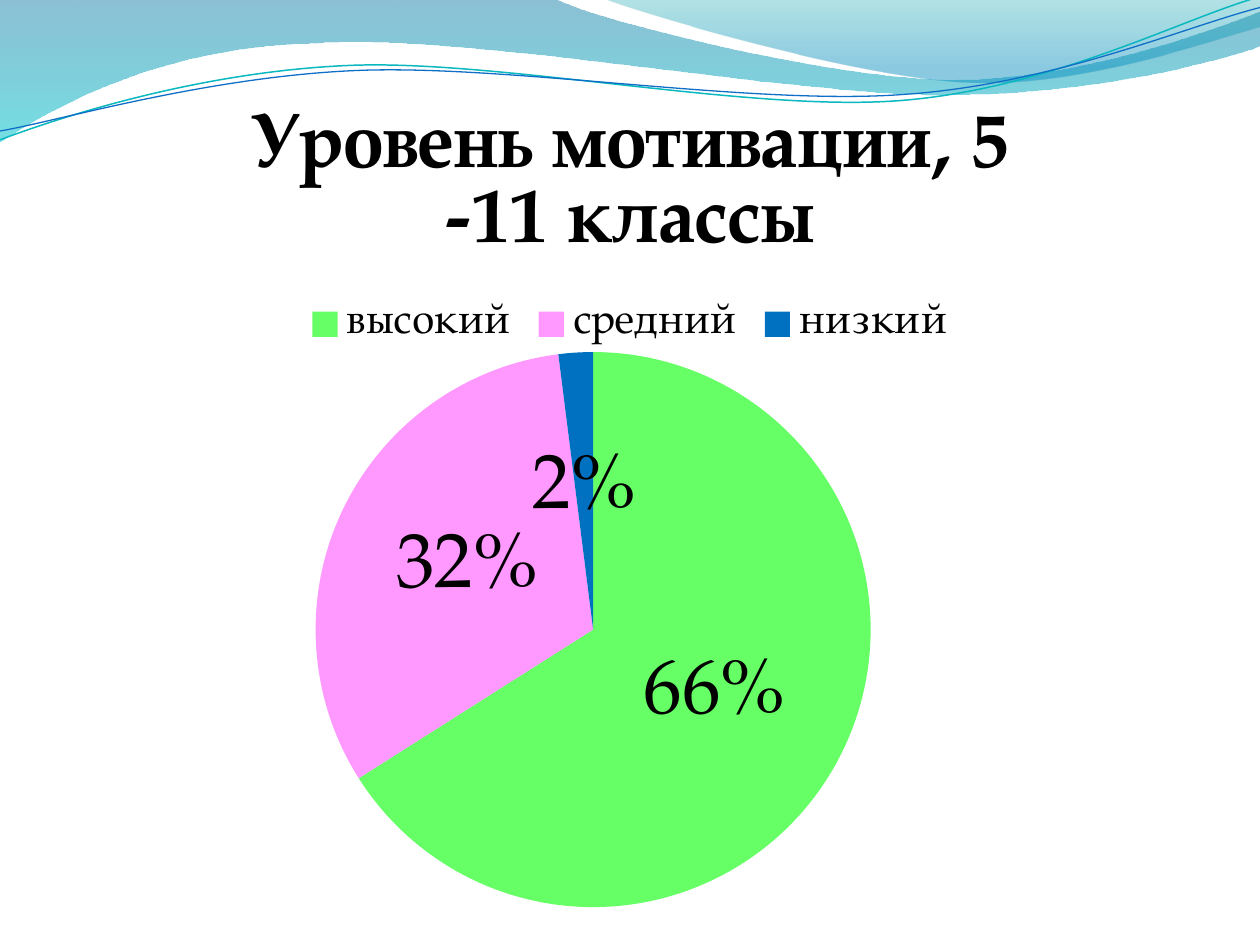
from lxml.etree import SubElement
from pptx import Presentation
from pptx.chart.data import CategoryChartData
from pptx.dml.color import RGBColor
from pptx.enum.chart import XL_CHART_TYPE, XL_LABEL_POSITION, XL_LEGEND_POSITION
from pptx.oxml import parse_xml
from pptx.oxml.ns import nsdecls, qn
from pptx.util import Inches, Pt

FONT = "TeX Gyre Pagella"

# Each outline is a start point followed by lines (2 numbers) or curves (6 numbers)
BANDS = [
    {"outline": [(0, 0), (4.4, -0.01), (4.76, 0.17, 6.64, 0.63, 7.58, 0.63),
                 (8.53, 0.63, 9.58, 0.26, 10, 0.09), (10.01, 0.36),
                 (9.83, 0.44, 8.7, 0.76, 7.46, 0.75),
                 (6.22, 0.75, 3.82, 0.28, 2.57, 0.34),
                 (1.29, 0.36, 0.46, 0.83, -0.01, 1.13), (0, 0)],
     "stops": [(0, "0074A1", 45), (1, "00C6CF", 55)]},
    {"outline": [(4.79, -0.01), (5.09, 0.11, 6.82, 0.62, 7.69, 0.65),
                 (8.56, 0.69, 9.61, 0.32, 10, 0.21), (10, 0), (4.79, -0.01)],
     "stops": [(0, "00A1A9", 30), (0.8, "008BBF", 45)]},
]
STRANDS = [
    {"outline": [(0, 1.11), (0.48, 0.93, 1.58, 0.57, 2.77, 0.52),
                 (3.95, 0.47, 5.93, 0.89, 7.13, 0.8),
                 (8.33, 0.71, 9.38, 0.15, 9.98, -0.02)],
     "colour": "0AB8BF", "width": 0.85},
    {"outline": [(0, 1.04), (0.47, 0.96, 1.64, 0.61, 2.83, 0.56),
                 (4.03, 0.51, 5.97, 0.84, 7.17, 0.75),
                 (8.36, 0.67, 9.41, 0.21, 10, 0.06)],
     "colour": "0F6FC6", "width": 0.75},
]
LEVELS = [("высокий", 66, "66FF66"), ("средний", 32, "FF99FF"), ("низкий", 2, "0070C0")]


def colour(hex_string):
    return RGBColor.from_string(hex_string)


def format_font(font, **values):
    settings = {"name": FONT, "bold": False, **values}
    for name, value in settings.items():
        setattr(font, name, value)
    font.color.rgb = colour("000000")


def add_outline(page, outline, origin, close):
    """Draw straight segments between the nodes, then bend those that are curves."""
    left, top = origin
    nodes = [(left + Inches(part[-2]), top + Inches(part[-1])) for part in outline]
    builder = page.shapes.build_freeform(*nodes[0])
    builder.add_line_segments(nodes[1:], close=close)
    shape = builder.convert_to_shape()
    shape.shadow.inherit = False

    segments = list(shape.element.spPr.iter(qn("a:lnTo")))
    for segment, part in zip(segments, outline[1:]):
        if len(part) == 2:
            continue
        segment.tag = qn("a:cubicBezTo")
        handles = [(part[0], part[1]), (part[2], part[3])]
        for index, (x, y) in enumerate(handles):
            handle = SubElement(segment, qn("a:pt"), x=str(left + Inches(x) - shape.left),
                                y=str(top + Inches(y) - shape.top))
            segment.insert(index, handle)
    return shape


def add_waves(page, origin):
    # Translucent bands, shaded from top to bottom
    for band in BANDS:
        shape = add_outline(page, band["outline"], origin, True)
        shape.line.fill.background()
        shape.fill.gradient()
        shape.fill.gradient_angle = 270
        for stop, (position, hex_string, _) in zip(shape.fill.gradient_stops, band["stops"]):
            stop.position = position
            stop.color.rgb = colour(hex_string)
        tints = shape.element.spPr.iter(qn("a:srgbClr"))
        for tint, (_, _, opacity) in zip(tints, band["stops"]):
            SubElement(tint, qn("a:alpha"), val=str(opacity * 1000))

    # Thin strands
    for strand in STRANDS:
        shape = add_outline(page, strand["outline"], origin, False)
        shape.fill.background()
        shape.line.color.rgb = colour(strand["colour"])
        shape.line.width = Pt(strand["width"])


def place_plot(chart, **shares):
    """Fix the inner plot area as shares of the chart box."""
    parts = "".join(f'<c:{name} val="{value}"/>' for name, value in shares.items())
    plot_area = chart.element.chart.plotArea
    for old in plot_area.findall(qn("c:layout")):
        plot_area.remove(old)
    plot_area.insert(0, parse_xml(
        f'<c:layout {nsdecls("c")}><c:manualLayout><c:layoutTarget val="inner"/>'
        f'<c:xMode val="edge"/><c:yMode val="edge"/>{parts}</c:manualLayout></c:layout>'))


def add_level_chart(page, box):
    names, values, fills = zip(*LEVELS)
    data = CategoryChartData()
    data.categories = names
    data.add_series("Series 1", values)
    chart = page.shapes.add_chart(XL_CHART_TYPE.PIE, *box, data).chart
    format_font(chart.font, size=Pt(10))

    # Title and legend
    chart.has_title = True
    title = chart.chart_title
    title.include_in_layout = False
    title.text_frame.text = "Уровень мотивации, 5 -11 классы"
    format_font(title.text_frame.paragraphs[0].runs[0].font, size=Pt(44), bold=True)
    chart.has_legend = True
    chart.legend.position = XL_LEGEND_POSITION.TOP
    chart.legend.include_in_layout = False
    format_font(chart.legend.font, size=Pt(24))

    # Slices and percentages
    plot = chart.plots[0]
    plot.vary_by_categories = True
    series = plot.series[0]
    for index, hex_string in enumerate(fills):
        fill = series.points[index].format.fill
        fill.solid()
        fill.fore_color.rgb = colour(hex_string)
    labels = series.data_labels
    label_format = {"show_percentage": True, "show_value": False, "number_format": "0%",
                    "number_format_is_linked": False, "position": XL_LABEL_POSITION.CENTER}
    for name, value in label_format.items():
        setattr(labels, name, value)
    format_font(labels.font, size=Pt(44))
    place_plot(chart, x=0.03, y=0.34, w=7 / 8, h=0.66)


def main():
    deck = Presentation()
    deck.slide_width, deck.slide_height = Inches(10), Inches(7.5)
    width, height = deck.slide_width, deck.slide_height
    page = deck.slides.add_slide(deck.slide_layouts[6])
    add_waves(page, (0, 0))
    add_level_chart(page, [int(share) for share in
                           (width * 0.05, height * 0.07, width * 0.9, height * 0.89)])
    deck.save("out.pptx")


if __name__ == "__main__":
    main()
